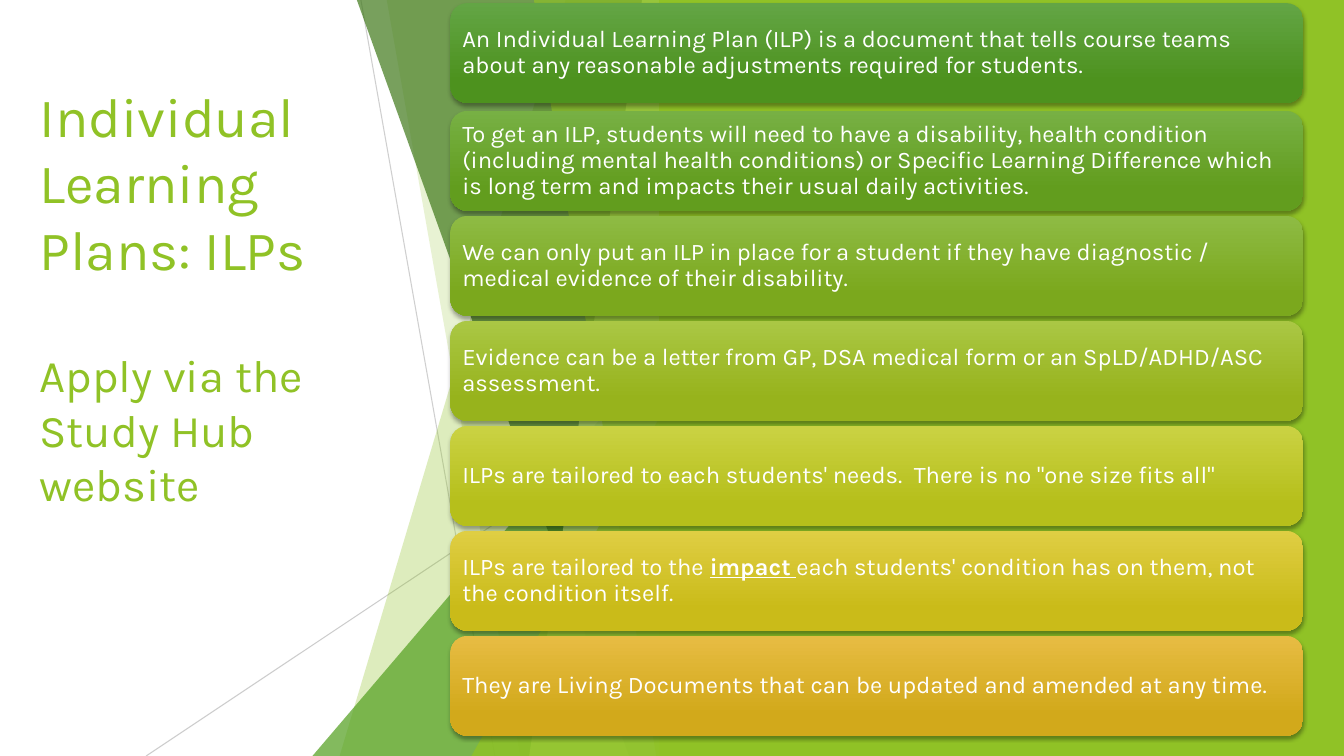
from pptx import Presentation
from pptx.dml.color import RGBColor
from pptx.enum.shapes import MSO_CONNECTOR, MSO_SHAPE
from pptx.enum.text import MSO_ANCHOR, MSO_AUTO_SIZE, PP_ALIGN
from pptx.oxml.ns import qn
from pptx.util import Pt
from lxml.etree import SubElement

WHITE = RGBColor(0xFF, 0xFF, 0xFF)
BLACK = RGBColor(0x00, 0x00, 0x00)
GREY = RGBColor(0xBF, 0xBF, 0xBF)
LIME = RGBColor(0x90, 0xC2, 0x26)
PALE_LIME = RGBColor(0xC0, 0xE4, 0x74)
GREEN = RGBColor(0x54, 0xA0, 0x21)
DARK_GREEN = RGBColor(0x3F, 0x78, 0x19)

FONT = "Karla"
WIDTH, HEIGHT = 960, 540
FACET_RIGHT = 479.5

# Each card: gradient top, gradient bottom, runs of (text, format)
CARDS = [
    (RGBColor(0x63, 0xA5, 0x45), RGBColor(0x4D, 0x92, 0x1E),
     [("An Individual Learning Plan (ILP) is a document that tells course teams "
       "about any reasonable adjustments required for students.", {})]),
    (RGBColor(0x77, 0xB0, 0x44), RGBColor(0x62, 0x9D, 0x1E),
     [("To get an ILP, students will need to have a disability, health condition "
       "(including mental health conditions) or Specific Learning Difference "
       "which is long term and impacts their usual daily activities.", {})]),
    (RGBColor(0x8E, 0xBB, 0x44), RGBColor(0x7B, 0xA8, 0x1D),
     [("We can only put an ILP in place for a student if they have diagnostic / "
       "medical evidence of their disability.", {})]),
    (RGBColor(0xAA, 0xC7, 0x44), RGBColor(0x97, 0xB3, 0x1C),
     [("Evidence can be a letter from GP, DSA medical form or an SpLD/ADHD/ASC "
       "assessment.", {})]),
    (RGBColor(0xCA, 0xD2, 0x43), RGBColor(0xB6, 0xBF, 0x1B),
     [("ILPs are tailored to each students' needs.  There is no "
       "\"one size fits all\"", {})]),
    (RGBColor(0xDF, 0xCE, 0x43), RGBColor(0xCA, 0xBB, 0x19),
     [("ILPs are tailored to the ", {}),
      ("impact", {"bold": True, "underline": True}),
      (" ", {"underline": True}),
      ("each students' condition has on them, not the condition itself.", {})]),
    (RGBColor(0xE7, 0xBC, 0x43), RGBColor(0xD2, 0xA9, 0x1B),
     [("They are Living Documents that can be updated and amended at any time.", {})]),
]
CARD_TOPS = [2.2] + [79.2 + 75 * i for i in range(6)]


def add_alpha(fill_parent, percent):
    color = fill_parent.find(qn("a:solidFill"))[0]
    SubElement(color, qn("a:alpha"), val=str(percent * 1000))


def fill_plain(shape, color, alpha=100):
    shape.shadow.inherit = False
    shape.fill.solid()
    shape.fill.fore_color.rgb = color
    shape.line.fill.background()
    if alpha < 100:
        add_alpha(shape._element.spPr, alpha)


def add_run(p, text, size, color, **extra):
    r = p.add_run()
    r.text = text
    for name, value in {"name": FONT, "size": Pt(size), **extra}.items():
        setattr(r.font, name, value)
    r.font.color.rgb = color


def add_title(s):
    title = s.shapes.title
    box = {"left": 21, "top": 50.4, "width": 279.4, "height": 322.6}
    for name, value in box.items():
        setattr(title, name, Pt(value))
    tf = title.text_frame
    tf.auto_size = MSO_AUTO_SIZE.NONE
    tf.vertical_anchor = MSO_ANCHOR.MIDDLE
    heading, hint = tf.paragraphs[0], tf.add_paragraph()
    add_run(heading, "Individual Learning Plans: ILPs", 39.6, LIME)
    add_run(hint, "Apply via the Study Hub website", 32.4, LIME)
    heading.alignment = hint.alignment = PP_ALIGN.LEFT
    heading.space_before = Pt(0)
    hint.space_before = Pt(47)


def add_thin_line(s, x1, y1, x2, y2, alpha):
    line = s.shapes.add_connector(MSO_CONNECTOR.STRAIGHT, Pt(x1), Pt(y1), Pt(x2), Pt(y2))
    line.line.color.rgb = GREY
    line.line.width = Pt(0.75)
    spPr = line._element.spPr
    add_alpha(spPr.find(qn("a:ln")), alpha)
    SubElement(spPr, qn("a:effectLst"))


def add_facet(s, top_left, bottom_left, color, alpha):
    builder = s.shapes.build_freeform(Pt(top_left), 0)
    corners = [(FACET_RIGHT, 0), (FACET_RIGHT, HEIGHT), (bottom_left, HEIGHT)]
    builder.add_line_segments([(Pt(x), Pt(y)) for x, y in corners], close=True)
    fill_plain(builder.convert_to_shape(), color, alpha)


def add_corner(s, left, top, color, alpha):
    sp = s.shapes.add_shape(MSO_SHAPE.ISOSCELES_TRIANGLE, Pt(left), Pt(top),
                            Pt(FACET_RIGHT - left), Pt(HEIGHT - top))
    sp.adjustments[0] = 1
    fill_plain(sp, color, alpha)


def add_card_shadow(sp):
    sp.shadow.inherit = False
    effects = sp._element.spPr.find(qn("a:effectLst"))
    shadow = SubElement(effects, qn("a:outerShdw"), blurRad=str(Pt(3)),
                        dist=str(Pt(2)), dir="5400000", rotWithShape="0")
    color = SubElement(shadow, qn("a:srgbClr"), val=str(BLACK))
    SubElement(color, qn("a:alpha"), val="35000")


def add_card(s, top, light, dark, runs):
    sp = s.shapes.add_shape(MSO_SHAPE.ROUNDED_RECTANGLE,
                            Pt(321.8), Pt(top), Pt(609), Pt(71.3))
    sp.fill.gradient()
    sp.fill.gradient_angle = 270
    for stop, color, position in zip(sp.fill.gradient_stops, (light, dark), (0, 0.78)):
        stop.color.rgb = color
        stop.position = position
    sp.line.fill.background()
    add_card_shadow(sp)
    tf = sp.text_frame
    frame = {"word_wrap": True, "vertical_anchor": MSO_ANCHOR.MIDDLE}
    frame.update({f"margin_{side}": Pt(5) for side in ("left", "top", "right", "bottom")})
    for name, value in frame.items():
        setattr(tf, name, value)
    p = tf.paragraphs[0]
    p.alignment = PP_ALIGN.LEFT
    p.line_spacing = 0.9
    for text, extra in runs:
        add_run(p, text, 17, WHITE, **extra)


def main():
    prs = Presentation()
    prs.slide_width, prs.slide_height = Pt(WIDTH), Pt(HEIGHT)
    s = prs.slides.add_slide(prs.slide_layouts[5])
    add_title(s)

    # Faceted background
    add_thin_line(s, 257.8, 0, 353.5, HEIGHT, 75)
    add_thin_line(s, FACET_RIGHT, 290, 104.4, HEIGHT, 80)
    add_facet(s, 404, 242.6, LIME, 30)
    add_facet(s, 276.3, 371.5, LIME, 20)
    add_corner(s, 223.2, 239.8, GREEN, 72)
    add_facet(s, 254.9, 449.3, DARK_GREEN, 70)
    add_facet(s, 458.6, 378, PALE_LIME, 70)
    add_facet(s, 381.4, 468.7, LIME, 65)
    add_corner(s, 336.8, 283, LIME, 80)

    # Right-hand panel
    panel = s.shapes.add_shape(MSO_SHAPE.RECTANGLE, Pt(470.8), 0, Pt(489.2), Pt(HEIGHT))
    fill_plain(panel, LIME)

    # Stacked cards
    for top, card in zip(CARD_TOPS, CARDS):
        add_card(s, top, *card)

    prs.save("out.pptx")


if __name__ == "__main__":
    main()
